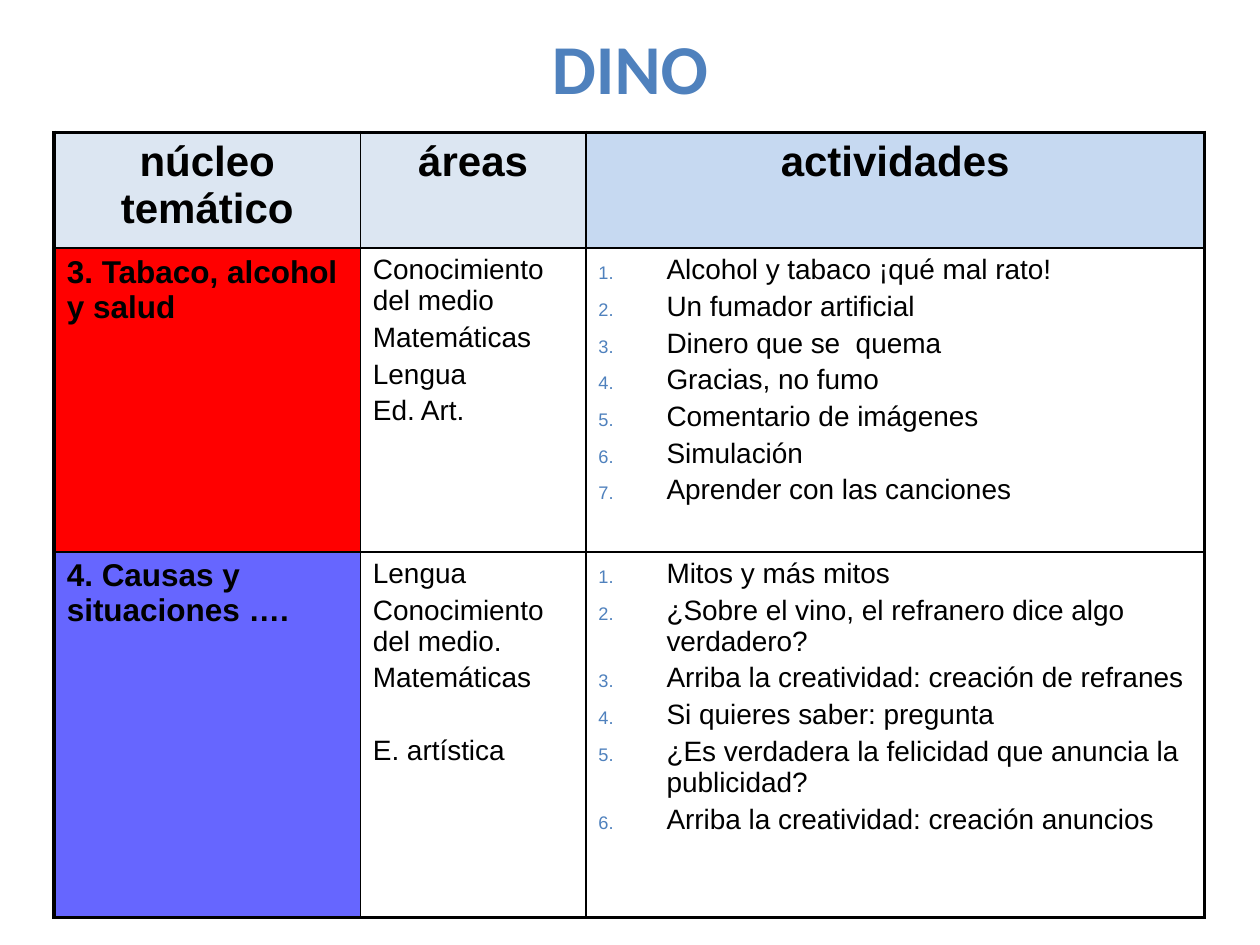
from dataclasses import dataclass
from typing import Optional

from lxml import etree
from pptx import Presentation
from pptx.dml.color import RGBColor
from pptx.enum.text import MSO_ANCHOR, PP_ALIGN
from pptx.oxml.ns import qn
from pptx.util import Inches, Pt

LEFT, CENTER = PP_ALIGN.LEFT, PP_ALIGN.CENTER
MIDDLE = MSO_ANCHOR.MIDDLE
BLACK, ACCENT = "000000", "4F81BD"
OUTER_LINE, INNER_LINE = 2.25, 1
COLUMN_WIDTHS = (2.43, 1.79, 4.91)
ROW_HEIGHTS = (0.92, 2.41, 2.9)
NUMBER_INDENT = Inches(0.54)


@dataclass(frozen=True)
class Entry:
    lines: tuple[str, ...]
    fill: Optional[str] = None
    size: float = 16
    bold: bool = False
    align: PP_ALIGN = LEFT
    numbered: bool = False


def heading(text: str, fill: str) -> Entry:
    return Entry((text,), fill, 24, True, CENTER)


def topic(text: str, fill: str) -> Entry:
    return Entry((text,), fill, 18, True)


def activities(*lines: str) -> Entry:
    return Entry(lines, numbered=True)


ENTRIES = (
    (
        heading("núcleo temático", "DCE6F2"),
        heading("áreas", "DCE6F2"),
        heading("actividades", "C6D9F1"),
    ),
    (
        topic("3. Tabaco, alcohol y salud", "FF0000"),
        Entry(("Conocimiento del medio", "Matemáticas", "Lengua", "Ed. Art.")),
        activities(
            "Alcohol y tabaco ¡qué mal rato!",
            "Un fumador artificial",
            "Dinero que se  quema",
            "Gracias, no fumo",
            "Comentario de imágenes",
            "Simulación",
            "Aprender con las canciones",
        ),
    ),
    (
        topic("4. Causas y situaciones ….", "6666FF"),
        Entry(("Lengua", "Conocimiento del medio.", "Matemáticas", "E. artística")),
        activities(
            "Mitos y más mitos",
            "¿Sobre el vino, el refranero dice algo verdadero?",
            "Arriba la creatividad: creación de refranes",
            "Si quieres saber: pregunta",
            "¿Es verdadera la felicidad que anuncia la publicidad?",
            "Arriba la creatividad: creación anuncios",
        ),
    ),
)


def rgb(color: str) -> RGBColor:
    return RGBColor.from_string(color)


def add_child(parent, tag: str, **attributes):
    return etree.SubElement(parent, qn(tag), attributes)


def write(paragraph, text: str, *, size: float, color: str = BLACK,
          font: str = "Arial", bold: bool = False, align: PP_ALIGN = LEFT) -> None:
    paragraph.alignment = align
    run = paragraph.add_run()
    run.text = text
    run.font.name = font
    run.font.size = Pt(size)
    run.font.bold = bold
    run.font.color.rgb = rgb(color)


def space_before(paragraph, percent: int) -> None:
    spacing = add_child(paragraph._p.get_or_add_pPr(), "a:spcBef")
    add_child(spacing, "a:spcPct", val=str(percent * 1000))


def number(paragraph) -> None:
    properties = paragraph._p.get_or_add_pPr()
    properties.set("marL", str(NUMBER_INDENT))
    properties.set("indent", str(-NUMBER_INDENT))
    add_child(add_child(properties, "a:buClr"), "a:srgbClr", val=ACCENT)
    add_child(properties, "a:buSzPct", val="65000")
    add_child(properties, "a:buAutoNum", type="arabicPeriod")


def draw_borders(cell, row: int, column: int) -> None:
    outer_sides = {
        "a:lnL": column == 0,
        "a:lnR": column == len(COLUMN_WIDTHS) - 1,
        "a:lnT": row == 0,
        "a:lnB": row == len(ROW_HEIGHTS) - 1,
    }
    properties = cell._tc.get_or_add_tcPr()
    for side, is_outer in outer_sides.items():
        width = Pt(OUTER_LINE if is_outer else INNER_LINE)
        line = add_child(properties, side, w=str(width))
        add_child(add_child(line, "a:solidFill"), "a:srgbClr", val=BLACK)


def draw_entry(cell, entry: Entry) -> None:
    if entry.fill:
        cell.fill.solid()
        cell.fill.fore_color.rgb = rgb(entry.fill)
    else:
        cell.fill.background()
    frame = cell.text_frame
    for index, text in enumerate(entry.lines):
        paragraph = frame.add_paragraph() if index else frame.paragraphs[0]
        write(paragraph, text, size=entry.size, bold=entry.bold, align=entry.align)
        if text == "E. artística":
            paragraph.space_before = Pt(24)
        else:
            space_before(paragraph, 20)
        if entry.numbered:
            number(paragraph)


def draw_title(slide) -> None:
    title = slide.shapes.add_textbox(Inches(0.5), Inches(0.3), Inches(9), Inches(0.45))
    title.text_frame.word_wrap = True
    title.text_frame.vertical_anchor = MIDDLE
    write(title.text_frame.paragraphs[0], "DINO", size=40, color=ACCENT,
          font="Calibri", bold=True, align=CENTER)


def draw_programme(slide) -> None:
    programme = slide.shapes.add_table(
        len(ROW_HEIGHTS), len(COLUMN_WIDTHS), Inches(0.43), Inches(1.05),
        Inches(sum(COLUMN_WIDTHS)), Inches(sum(ROW_HEIGHTS))).table
    programme.horz_banding = False
    for column, width in zip(programme.columns, COLUMN_WIDTHS):
        column.width = Inches(width)
    for row, height in zip(programme.rows, ROW_HEIGHTS):
        row.height = Inches(height)
    for row_index, entries in enumerate(ENTRIES):
        for column_index, entry in enumerate(entries):
            cell = programme.cell(row_index, column_index)
            draw_borders(cell, row_index, column_index)
            draw_entry(cell, entry)


def main() -> None:
    presentation = Presentation()
    presentation.slide_width = Inches(10)
    presentation.slide_height = Inches(7.5)
    slide = presentation.slides.add_slide(presentation.slide_layouts[6])
    draw_title(slide)
    draw_programme(slide)
    presentation.save("out.pptx")


if __name__ == "__main__":
    main()
